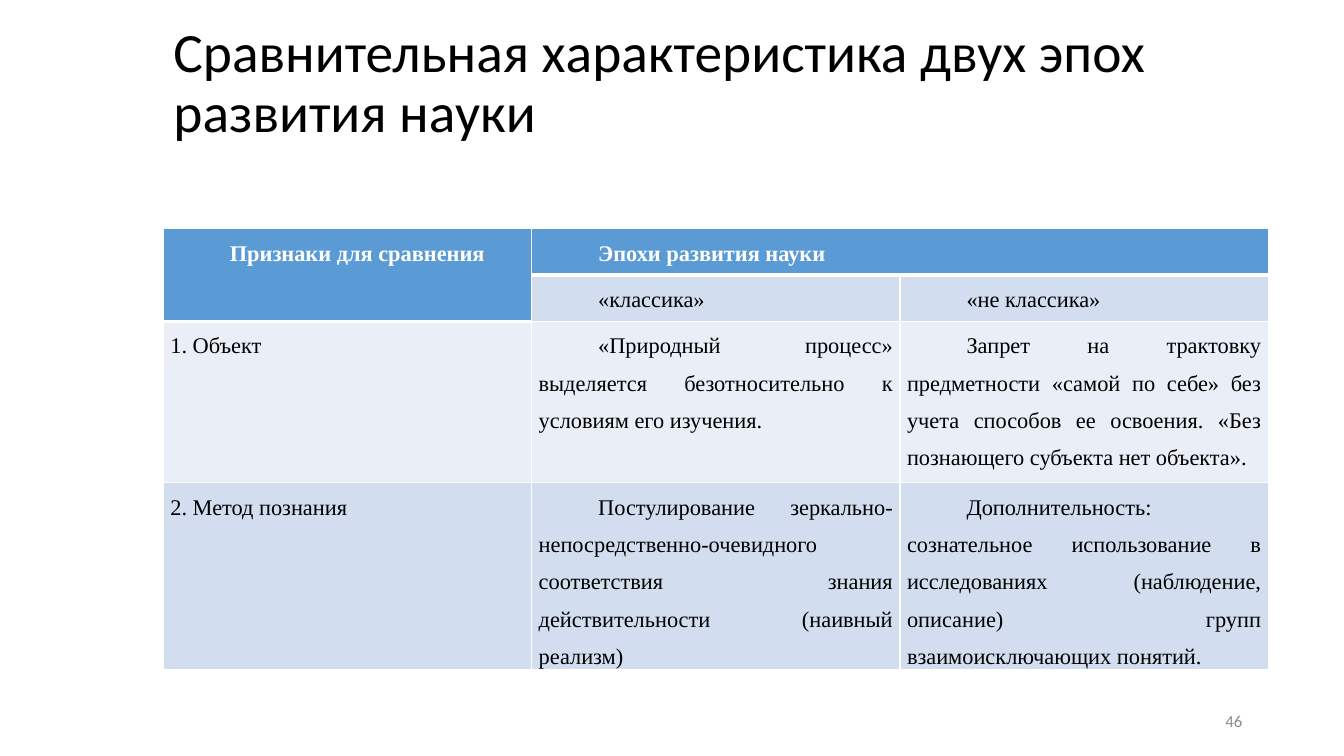
from dataclasses import dataclass

from lxml.etree import SubElement as Sub
from pptx import Presentation
from pptx.dml.color import RGBColor as Rgb
from pptx.enum.text import MSO_ANCHOR as Anchor, MSO_AUTO_SIZE as Fit, PP_ALIGN as Align
from pptx.oxml.ns import qn
from pptx.util import Inches, Pt


@dataclass(frozen=True)
class Theme:
    sans: str = "Calibri"
    serif: str = "Times New Roman"
    black: str = "000000"
    white: str = "FFFFFF"
    gray: str = "8C8C8C"
    head: str = "5B9BD5"
    bands: tuple[str, str] = ("EAEFF7", "D2DEEF")
    title: float = 39.6
    body: float = 16
    small: float = 12
    thin: float = 1
    thick: float = 3


@dataclass(frozen=True)
class Cell:
    row: int
    col: int
    text: str
    rows: int = 1
    cols: int = 1


THEME = Theme()
LEFT, WIDTH = 1.62, 10.96
HEIGHTS = (0.46, 0.46, 1.6, 1.6)
HEAD_END = (1, 0, 0)  # last header row in each column
CELLS = (
    Cell(0, 0, "Признаки для сравнения", rows=2),
    Cell(0, 1, "Эпохи развития науки", cols=2),
    Cell(1, 1, "«классика»"),
    Cell(1, 2, "«не классика»"),
    Cell(2, 0, "1. Объект"),
    Cell(2, 1, "«Природный процесс» выделяется безотносительно к условиям его изучения."),
    Cell(2, 2, "Запрет на трактовку предметности «самой по себе» без учета способов ее "
               "освоения. «Без познающего субъекта нет объекта»."),
    Cell(3, 0, "2. Метод познания"),
    Cell(3, 1, "Постулирование зеркально-непосредственно-очевидного соответствия знания "
               "действительности (наивный реализм)"),
    Cell(3, 2, "Дополнительность: сознательное использование в исследованиях "
               "(наблюдение, описание) групп взаимоисключающих понятий."),
)


def apply(item, **values) -> None:
    for name, value in values.items():
        setattr(item, name, value)


def write(frame, text: str, font: str, size: float, color: str,
          align: Align, space: float = 1, bold: bool = False):
    para = frame.paragraphs[0]
    apply(para, alignment=align, line_spacing=space)
    run = para.add_run()
    run.text = text
    apply(run.font, name=font, size=Pt(size), bold=bold)
    run.font.color.rgb = Rgb.from_string(color)
    return para


def place(shape, left: float, top: float, width: float, height: float) -> None:
    apply(shape, left=Inches(left), top=Inches(top),
          width=Inches(width), height=Inches(height))
    apply(shape.text_frame, word_wrap=True, auto_size=Fit.NONE,
          vertical_anchor=Anchor.MIDDLE)


def edge(cell, row: int, col: int) -> None:
    """Draw white borders, thick under the header."""
    last = HEAD_END[col]
    wide = {"T": row == last + 1, "B": row <= last}
    props = cell._tc.get_or_add_tcPr()
    for side in "LRTB":
        size = THEME.thick if wide.get(side) else THEME.thin
        line = Sub(props, qn(f"a:ln{side}"), w=str(Pt(size)))
        Sub(Sub(line, qn("a:solidFill")), qn("a:srgbClr"), val=THEME.white)


def add_grid(slide) -> None:
    rows, cols = len(HEIGHTS), len(HEAD_END)
    table = slide.shapes.add_table(
        rows, cols, Inches(LEFT), Inches(2.27), Inches(WIDTH), Inches(sum(HEIGHTS))).table
    for row, height in zip(table.rows, HEIGHTS):
        row.height = Inches(height)

    # Fills, margins and borders
    for row in range(rows):
        for col in range(cols):
            cell = table.cell(row, col)
            apply(cell, margin_left=Inches(0.07), margin_right=Inches(0.07),
                  margin_top=0, margin_bottom=0)
            edge(cell, row, col)
            cell.fill.solid()
            color = THEME.head if row <= HEAD_END[col] else THEME.bands[row % 2]
            cell.fill.fore_color.rgb = Rgb.from_string(color)

    # Wording
    for item in CELLS:
        cell = table.cell(item.row, item.col)
        if item.rows * item.cols > 1:
            cell.merge(table.cell(item.row + item.rows - 1, item.col + item.cols - 1))
        head = item.row <= HEAD_END[item.col]
        para = write(cell.text_frame, item.text, THEME.serif, THEME.body,
                     THEME.white if head else THEME.black, Align.JUSTIFY, 1.5, head)
        if head or item.col:
            para._p.get_or_add_pPr().set("indent", str(Inches(0.59)))


def main() -> None:
    deck = Presentation()
    apply(deck, slide_width=Inches(13.33), slide_height=Inches(7.5))
    slide = deck.slides.add_slide(deck.slide_layouts[5])

    # Title
    title = slide.shapes.title
    place(title, LEFT, 0.21, WIDTH, 1.26)
    write(title.text_frame, "Сравнительная характеристика двух эпох развития науки",
          THEME.sans, THEME.title, THEME.black, Align.LEFT, 0.9)

    # Table
    add_grid(slide)

    # Page number
    page = slide.shapes.add_textbox(0, 0, 0, 0)
    place(page, 9.42, 6.95, 3, 0.4)
    write(page.text_frame, "46", THEME.sans, THEME.small, THEME.gray, Align.RIGHT)

    deck.save("out.pptx")


if __name__ == "__main__":
    main()
